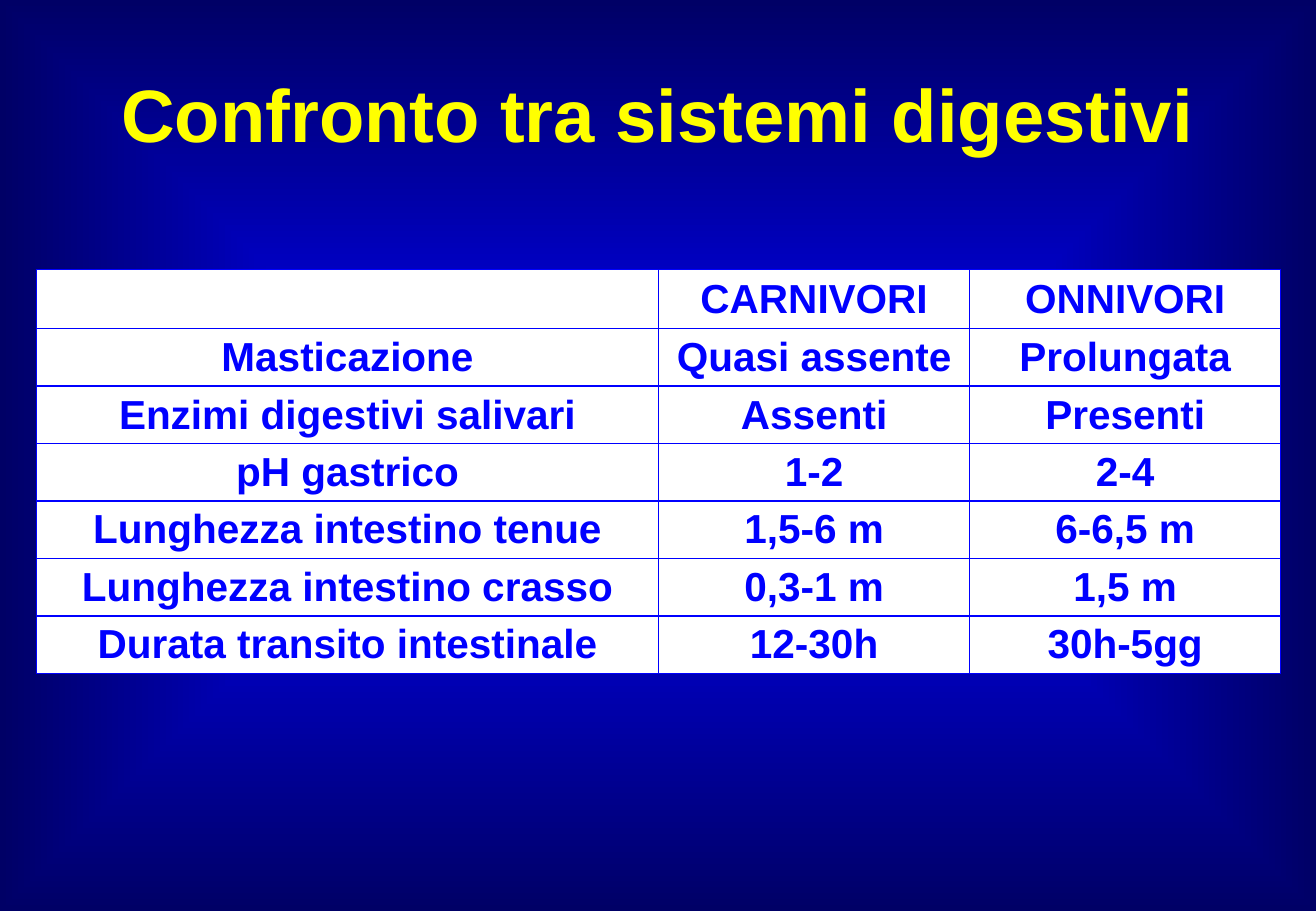
from dataclasses import dataclass

import pptx
import pptx.dml.color
import pptx.enum.text
import pptx.oxml
import pptx.oxml.ns
import pptx.util

Inches = pptx.util.Inches
Pt = pptx.util.Pt
RGB = pptx.dml.color.RGBColor.from_string
NS = pptx.oxml.ns.nsdecls("a")


@dataclass(frozen=True)
class Theme:
    font: str = "Arial"
    title_color: str = "FFFF00"
    title_size: int = 44
    table_color: str = "0000FF"
    table_size: int = 24
    cell_fill: str = "FFFFFF"
    border_width: int = 1
    bg_center: str = "0000FF"
    bg_edge: str = "000066"


THEME = Theme()

TITLE = "Confronto tra sistemi digestivi"
ROWS = [
    ("", "CARNIVORI", "ONNIVORI"),
    ("Masticazione", "Quasi assente", "Prolungata"),
    ("Enzimi digestivi salivari", "Assenti", "Presenti"),
    ("pH gastrico", "1-2", "2-4"),
    ("Lunghezza intestino tenue", "1,5-6 m", "6-6,5 m"),
    ("Lunghezza intestino crasso", "0,3-1 m", "1,5 m"),
    ("Durata transito intestinale", "12-30h", "30h-5gg"),
]
COLUMN_SHARES = (0.5, 0.25, 0.25)


def paint_background(slide):
    """Fill the slide with a gradient that darkens from centre to edges."""
    fill = slide.background.fill
    fill.gradient()
    for stop, color in zip(fill.gradient_stops, (THEME.bg_center, THEME.bg_edge)):
        stop.color.rgb = RGB(color)
    lin = slide.background._cSld.find(".//" + pptx.oxml.ns.qn("a:lin"))
    lin.getparent().replace(lin, pptx.oxml.parse_xml(
        f'<a:path {NS} path="shape">'
        '<a:fillToRect l="50000" t="50000" r="50000" b="50000"/></a:path>'))


def write_text(tf, text, size, color):
    p = tf.paragraphs[0]
    p.alignment = pptx.enum.text.PP_ALIGN.CENTER
    p.font.size = Pt(size)
    if text:
        r = p.add_run()
        r.text = text
        r.font.name = THEME.font
        r.font.size = Pt(size)
        r.font.bold = True
        r.font.color.rgb = RGB(color)


def add_title(slide, left, top, width, height):
    tf = slide.shapes.add_textbox(left, top, width, height).text_frame
    tf.word_wrap = True
    tf.vertical_anchor = pptx.enum.text.MSO_ANCHOR.MIDDLE
    write_text(tf, TITLE, THEME.title_size, THEME.title_color)


def style_cell(cell):
    tc_pr = cell._tc.get_or_add_tcPr()
    for side in "LRTB":
        tc_pr.append(pptx.oxml.parse_xml(
            f'<a:ln{side} {NS} w="{Pt(THEME.border_width)}"><a:solidFill>'
            f'<a:srgbClr val="{THEME.table_color}"/></a:solidFill></a:ln{side}>'))
    cell.fill.solid()
    cell.fill.fore_color.rgb = RGB(THEME.cell_fill)
    cell.margin_top = cell.margin_bottom = Inches(0.04)
    cell.vertical_anchor = pptx.enum.text.MSO_ANCHOR.MIDDLE


def add_comparison_table(slide, left, top, width, height):
    table = slide.shapes.add_table(
        len(ROWS), len(COLUMN_SHARES), left, top, width, height).table
    table.horz_banding = False
    for column, share in zip(table.columns, COLUMN_SHARES):
        column.width = int(width * share)
    for row, texts in zip(table.rows, ROWS):
        row.height = height // len(ROWS)
        for cell, text in zip(row.cells, texts):
            style_cell(cell)
            write_text(cell.text_frame, text, THEME.table_size, THEME.table_color)


def main():
    prs = pptx.Presentation()
    prs.slide_width, prs.slide_height = Inches(10.83), Inches(7.5)
    slide = prs.slides.add_slide(prs.slide_layouts[6])
    paint_background(slide)
    add_comparison_table(slide, Inches(0.3), Inches(2.22), Inches(10.24), Inches(3.31))
    add_title(slide, Inches(0.54), Inches(0.3), Inches(9.75), Inches(1.25))
    prs.save("out.pptx")


if __name__ == "__main__":
    main()
